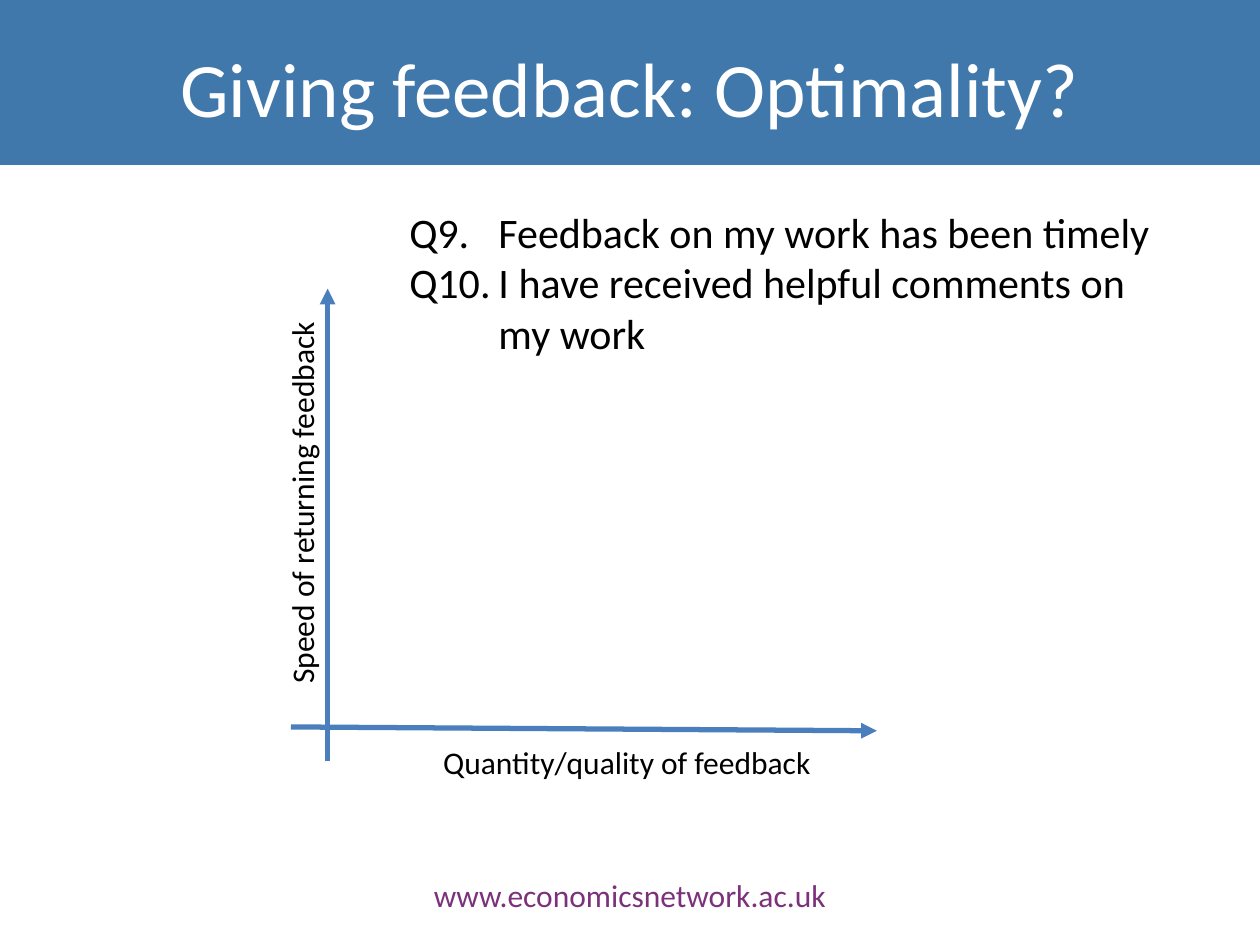
from dataclasses import dataclass

from lxml import etree
from pptx import Presentation
from pptx.dml.color import RGBColor
from pptx.enum import shapes, text
from pptx.oxml import ns
from pptx.util import Pt


@dataclass(frozen=True)
class Theme:
    font: str = "Calibri"
    banner: RGBColor = RGBColor(0x40, 0x78, 0xAB)
    axis: RGBColor = RGBColor(0x4B, 0x7E, 0xBC)
    title: RGBColor = RGBColor(0xFF, 0xFF, 0xFF)
    body: RGBColor = RGBColor(0, 0, 0)
    link: RGBColor = RGBColor(0x7C, 0x32, 0x7B)
    title_size: int = 44
    body_size: int = 24
    label_size: int = 18
    axis_width: int = 3


THEME = Theme()
SLIDE_W, SLIDE_H = 720, 540
HANGING_INDENT = 51


def add_banner(slide, height):
    banner = slide.shapes.add_shape(
        shapes.MSO_SHAPE.RECTANGLE, 0, 0, Pt(SLIDE_W), Pt(height))
    banner.shadow.inherit = False
    banner.fill.solid()
    banner.fill.fore_color.rgb = THEME.banner
    banner.line.fill.background()


def add_text(slide, box, lines, size, color, align=text.PP_ALIGN.LEFT,
             anchor=text.MSO_ANCHOR.TOP, wrap=True, hanging=0, rotation=0):
    holder = slide.shapes.add_textbox(*map(Pt, box))
    holder.rotation = rotation
    frame = holder.text_frame
    frame.word_wrap = wrap
    frame.vertical_anchor = anchor
    frame.text = "\n".join(lines)
    for paragraph in frame.paragraphs:
        paragraph.alignment = align
        if hanging:
            props = paragraph._p.get_or_add_pPr()
            props.set("marL", str(Pt(hanging)))
            props.set("indent", str(-Pt(hanging)))
        paragraph.font.name = THEME.font
        paragraph.font.size = Pt(size)
        paragraph.font.color.rgb = color


def add_axis(slide, start, end):
    axis = slide.shapes.add_connector(
        shapes.MSO_CONNECTOR.STRAIGHT, *map(Pt, start + end))
    axis.line.color.rgb = THEME.axis
    axis.line.width = Pt(THEME.axis_width)
    arrowhead = etree.SubElement(axis.line._get_or_add_ln(), ns.qn("a:tailEnd"))
    arrowhead.set("type", "triangle")
    etree.SubElement(axis._element.spPr, ns.qn("a:effectLst"))


def add_axis_label(slide, box, label, rotation=0):
    add_text(slide, box, [label], THEME.label_size, THEME.body,
             wrap=False, rotation=rotation)


def main():
    deck = Presentation()
    deck.slide_width, deck.slide_height = Pt(SLIDE_W), Pt(SLIDE_H)
    slide = deck.slides.add_slide(deck.slide_layouts[6])

    add_banner(slide, 94.3)
    add_text(slide, (0, 496.8, SLIDE_W, 29), ["www.economicsnetwork.ac.uk"],
             THEME.label_size, THEME.link, text.PP_ALIGN.CENTER)
    add_text(slide, (36, 4.3, 648, 90), ["Giving feedback: Optimality?"],
             THEME.title_size, THEME.title, text.PP_ALIGN.CENTER,
             text.MSO_ANCHOR.MIDDLE)

    add_axis(slide, (187.2, 434.9), (187.2, 164.9))
    add_axis(slide, (166.3, 415.4), (501.1, 417.6))
    add_axis_label(slide, (246.2, 421.2, 226.8, 29),
                   "Quantity/quality of feedback")
    add_axis_label(slide, (60.5, 271.4, 223.9, 29),
                   "Speed of returning feedback", rotation=270)

    questions = ["Q9.\tFeedback on my work has been timely",
                 "Q10.\tI have received helpful comments on my work"]
    add_text(slide, (226.8, 114.5, 441.4, 94.3), questions,
             THEME.body_size, THEME.body, hanging=HANGING_INDENT)

    deck.save("out.pptx")


if __name__ == "__main__":
    main()
